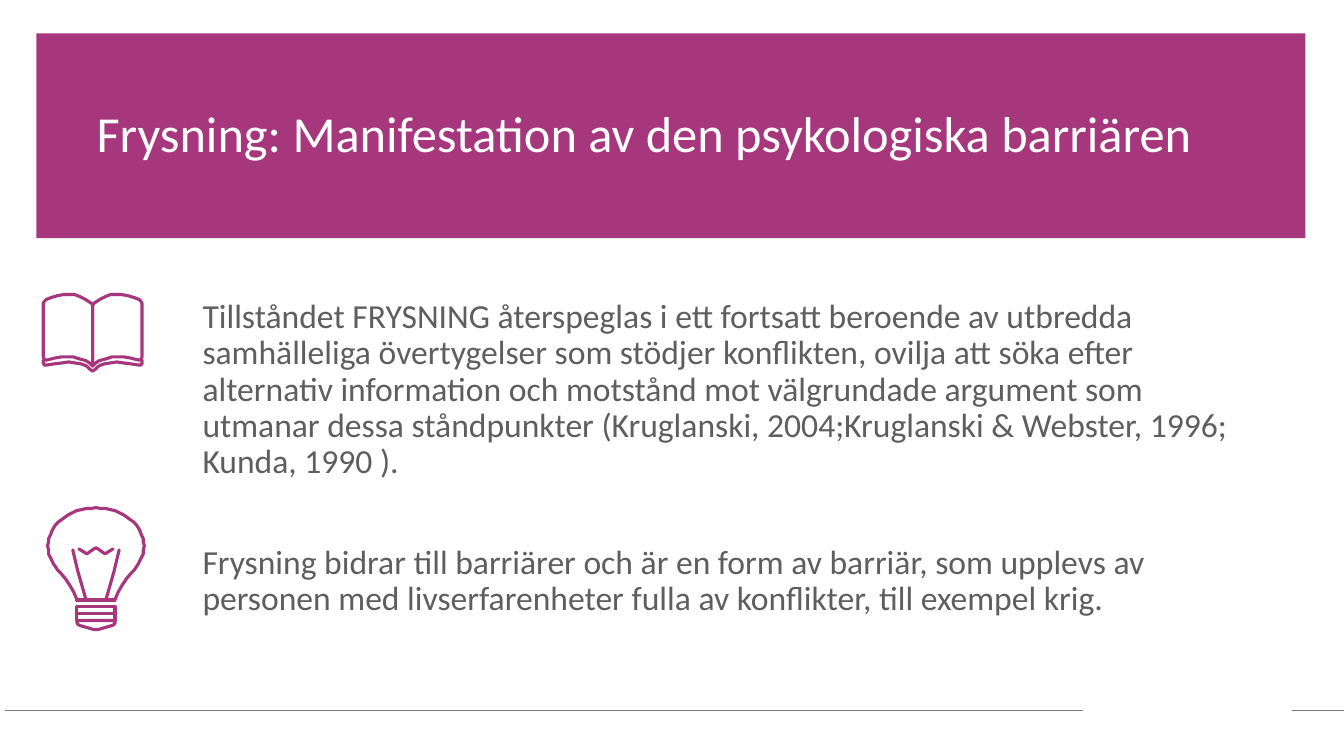
"""Build the slide about freezing as a psychological barrier."""
from dataclasses import dataclass

import lxml.etree
import pptx
import pptx.dml.color
import pptx.enum.shapes
import pptx.enum.text
import pptx.oxml.ns
import pptx.util

Cm = pptx.util.Cm
Pt = pptx.util.Pt
qn = pptx.oxml.ns.qn
Points = list[tuple[int, int]]

PURPLE, GREY, WHITE, RULE = "A6377D", "5E5E5E", "FFFFFF", "797979"
FONT = "Calibri"
UNIT = Cm(2.54) / 100


@dataclass
class Stroke:
    points: Points
    closed: bool = False


@dataclass
class Icon:
    left: float
    top: float
    strokes: list[Stroke]


@dataclass
class Paragraph:
    text: str
    space_before: float = 0


def mirror(points: Points, width: int) -> Points:
    return [(width - x, y) for x, y in points]


def colour(value: str) -> pptx.dml.color.RGBColor:
    return pptx.dml.color.RGBColor.from_string(value)


def set_outline(shape, value: str, width: float) -> None:
    shape.line.color.rgb = colour(value)
    shape.line.width = Pt(width)
    outline = shape.element.spPr.find(qn("a:ln"))
    outline.set("cap", "rnd")
    lxml.etree.SubElement(outline, qn("a:round"))


def add_line(page, start: tuple, end: tuple, value: str, width: float) -> None:
    line = page.shapes.add_connector(
        pptx.enum.shapes.MSO_CONNECTOR.STRAIGHT, *start, *end)
    set_outline(line, value, width)
    lxml.etree.SubElement(line.element.spPr, qn("a:effectLst"))


def style_outline_only(shape) -> None:
    shape.shadow.inherit = False
    shape.fill.background()
    set_outline(shape, PURPLE, 2.25)


def add_icon(page, icon: Icon) -> None:
    for stroke in icon.strokes:
        builder = page.shapes.build_freeform(*stroke.points[0], scale=UNIT)
        builder.add_line_segments(stroke.points[1:], close=stroke.closed)
        style_outline_only(builder.convert_to_shape(Cm(icon.left), Cm(icon.top)))


def fill_placeholder(box, place: tuple, paragraphs: list[Paragraph],
                     size: float, value: str) -> None:
    box.left, box.top, box.width, box.height = (Cm(length) for length in place)
    frame = box.text_frame
    frame.word_wrap = True
    frame.auto_size = pptx.enum.text.MSO_AUTO_SIZE.NONE
    frame.vertical_anchor = pptx.enum.text.MSO_ANCHOR.TOP
    for index, content in enumerate(paragraphs):
        para = frame.add_paragraph() if index else frame.paragraphs[0]
        para.alignment = pptx.enum.text.PP_ALIGN.LEFT
        para.line_spacing = 0.9
        para.space_before = Pt(content.space_before)
        properties = para._p.get_or_add_pPr()
        properties.set("marL", "0")
        properties.set("indent", "0")
        lxml.etree.SubElement(properties, qn("a:buNone"))
        span = para.add_run()
        span.text = content.text
        span.font.name = FONT
        span.font.size = Pt(size)
        span.font.color.rgb = colour(value)


BOOK_WIDTH, BULB_WIDTH = 98, 96
BOOK_PAGE = [
    (49, 12), (49, 71), (46, 68), (43, 66), (40, 65), (36, 64), (30, 62), (25, 62),
    (18, 62), (12, 63), (4, 65), (2, 65), (1, 64), (0, 62), (0, 9), (1, 7), (3, 5),
    (8, 3), (15, 1), (21, 0), (25, 0), (31, 0), (36, 2), (42, 5), (48, 9), (49, 11),
]
BOOK_COVER = [
    (0, 65), (0, 68), (1, 70), (4, 70), (10, 69), (18, 68), (25, 67), (32, 68),
    (38, 69), (43, 71), (46, 74), (49, 76),
]
BULB_SIDE = [
    (29, 91), (26, 84), (22, 77), (18, 71), (13, 65), (10, 62), (6, 56), (3, 50),
    (1, 46), (1, 42), (0, 38), (1, 34), (1, 31), (3, 27), (4, 24), (6, 20), (8, 17),
    (11, 14), (14, 12), (18, 9), (21, 7), (25, 5), (29, 3), (34, 2), (38, 1), (43, 1),
    (48, 0),
]
BULB_WIRE = [(38, 91), (30, 63), (25, 42)]
BULB_FILAMENT = [(31, 41), (39, 46), (46, 41), (48, 40)]
BULB_CAP = [(29, 112), (29, 114), (30, 116), (32, 117), (46, 121), (48, 121)]


def whole(half: Points, width: int) -> Points:
    return half + mirror(half, width)[-2::-1]


BOOK = Icon(1.09, 7.42, [
    Stroke(points, closed)
    for half, closed in ((BOOK_COVER, False), (BOOK_PAGE, True))
    for points in (half, mirror(half, BOOK_WIDTH))
])
BULB = Icon(1.2, 12.79, [
    Stroke(whole(BULB_CAP, BULB_WIDTH), True),
    Stroke(BULB_WIRE),
    Stroke(whole(BULB_SIDE, BULB_WIDTH)),
    Stroke(mirror(BULB_WIRE, BULB_WIDTH)),
    Stroke(whole(BULB_FILAMENT, BULB_WIDTH)),
])

TITLE = [Paragraph("Frysning: Manifestation av den psykologiska barriären")]
BODY = [
    Paragraph(
        "Tillståndet FRYSNING återspeglas i ett fortsatt beroende av utbredda "
        "samhälleliga övertygelser som stödjer konflikten, ovilja att söka efter "
        "alternativ information och motstånd mot välgrundade argument som utmanar "
        "dessa ståndpunkter (Kruglanski, 2004;Kruglanski & Webster, 1996; "
        "Kunda, 1990 )."),
    Paragraph(
        "Frysning bidrar till barriärer och är en form av barriär, som upplevs av "
        "personen med livserfarenheter fulla av konflikter, till exempel krig.", 46),
]


def main() -> None:
    deck = pptx.Presentation()
    deck.slide_width, deck.slide_height = Cm(33.87), Cm(19.05)
    page = deck.slides.add_slide(deck.slide_layouts[1])
    rectangle = pptx.enum.shapes.MSO_SHAPE.RECTANGLE

    banner = page.shapes.add_shape(rectangle, Cm(0.92), Cm(0.84), Cm(31.98), Cm(5.16))
    banner.shadow.inherit = False
    banner.fill.solid()
    banner.fill.fore_color.rgb = colour(PURPLE)
    banner.line.fill.background()
    page.shapes.element.insert(2, banner.element)

    fill_placeholder(page.shapes.title, (2.18, 2.62, 29.34, 1.93), TITLE, 36, WHITE)
    fill_placeholder(page.placeholders[1], (4.85, 7.42, 26.67, 9.02), BODY, 24, GREY)

    for start, end in ((27.28, 0.13), (33.87, 32.56)):
        add_line(page, (Cm(start), Cm(17.91)), (Cm(end), Cm(17.91)), RULE, 0.5)

    add_icon(page, BOOK)
    add_icon(page, BULB)
    base_left, base_width, band_height = Cm(1.93), Cm(0.97), Cm(0.17)
    for band in range(2):
        style_outline_only(page.shapes.add_shape(
            rectangle, base_left, Cm(15.29) + band * band_height,
            base_width, band_height))
    add_line(page, (base_left, Cm(15.12)), (base_left + base_width, Cm(15.12)),
             PURPLE, 2.25)

    deck.save("out.pptx")


if __name__ == "__main__":
    main()
